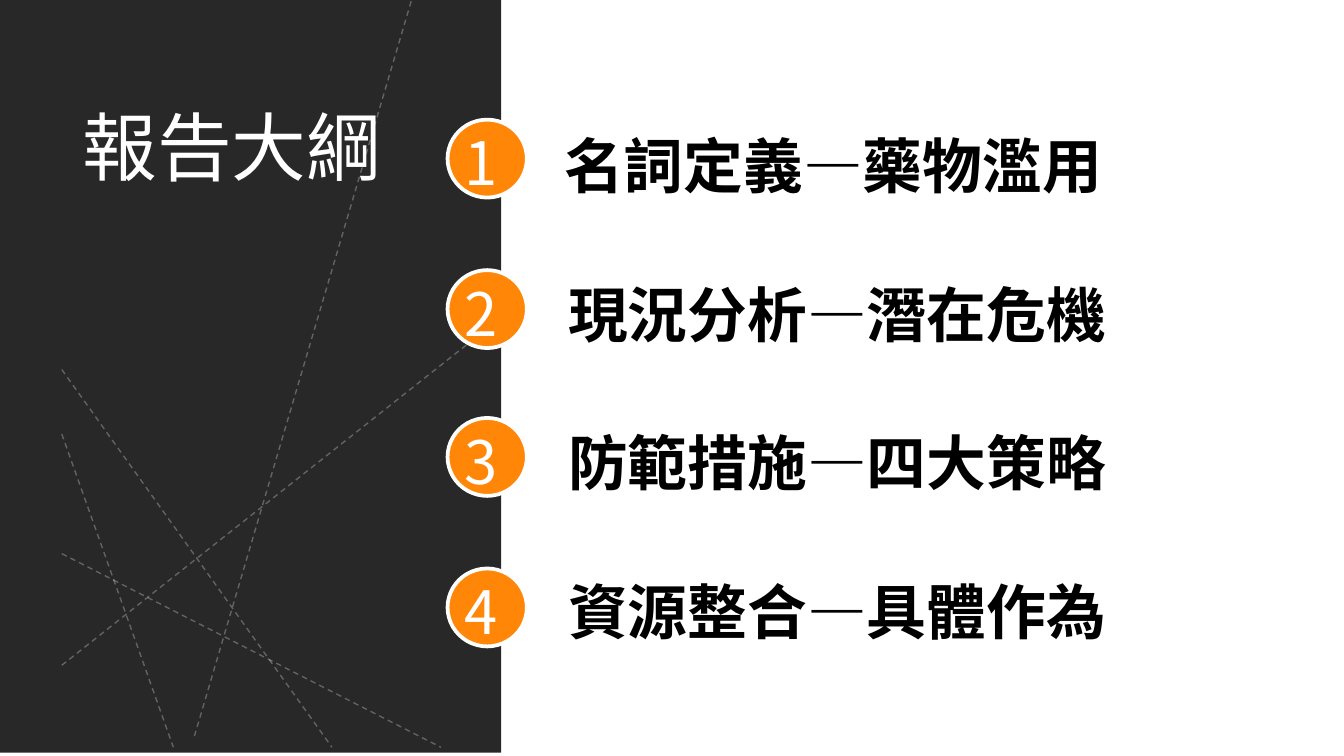
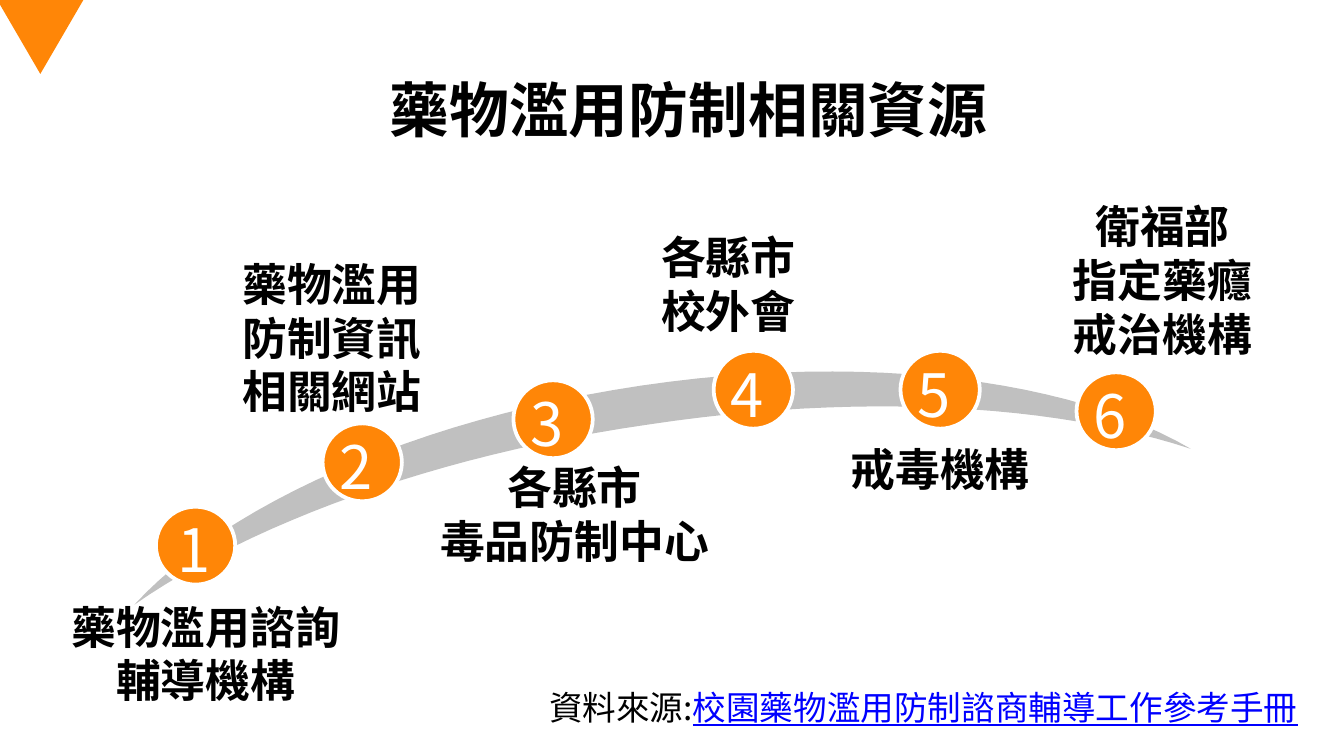
from lxml import etree
from pptx import Presentation
from pptx import util as u
from pptx.dml.color import RGBColor
from pptx.enum import dml, shapes, text
from pptx.oxml.ns import qn

# Shared style
ORANGE, DARK, GREY = "FF8607", "282828", "C0C0C0"
WHITE, BLACK, LINK = "FFFFFF", "000000", "0000FF"
FONT, TITLE_FONT, SOURCE_FONT = "Noto Sans CJK SC", "Roboto Condensed", "Noto Sans CJK JP"
LEFT, CENTER = text.PP_ALIGN.LEFT, text.PP_ALIGN.CENTER
BADGE_W, BADGE_H = 0.59, 0.58

# Slide 1: outline
OUTLINE_TITLE = "報告大綱"
OUTLINE = [  # label, label left and top, badge top
    ("名詞定義—藥物濫用", 4.1, 0.91, 0.89),
    ("現況分析—潛在危機", 4.13, 2.02, 2.01),
    ("防範措施—四大策略", 4.13, 3.12, 3.11),
    ("資源整合—具體作為", 4.13, 4.23, 4.23),
]
PANEL_LINES = [  # from x, y, to x, y
    (0.46, 4.12, 3.28, 5.56),
    (0.46, 4.95, 5.93, 0.62),
    (0.46, 3.23, 1.29, 5.56),
    (3.08, -0.06, 1.44, 5.5),
    (0.46, 2.75, 2.47, 5.56),
]

# Slide 2: resources along an arc
RESOURCE_TITLE = "藥物濫用防制相關資源"
RESOURCES = [  # badge left, top; label box; label lines
    ((1.16, 3.77), (0.42, 4.41, 2.22, 0.91), ["藥物濫用諮詢", "輔導機構"]),
    ((2.4, 3.15), (1.52, 1.86, 1.9, 1.31), ["藥物濫用", "防制資訊", "相關網站"]),
    ((3.82, 2.83), (3.03, 3.37, 2.49, 0.91), ["各縣市", "毒品防制中心"]),
    ((5.31, 2.61), (4.6, 1.66, 1.64, 0.91), ["各縣市", "校外會"]),
    ((6.7, 2.61), (6.19, 3.24, 1.61, 0.5), ["戒毒機構"]),
    ((8.01, 2.77), (7.83, 1.43, 1.64, 1.31), ["衛福部", "指定藥癮", "戒治機構"]),
]
ARC_START = (4.77, 2.87)
ARC_CURVES = [  # two control points and an end point
    ((6.46, 2.62), (7.99, 2.83), (8.86, 3.34)),
    ((7.86, 3.01), (6.4, 2.92), (4.82, 3.16)),
    ((3.23, 3.39), (1.86, 3.9), (1, 4.5)),
    ((1.68, 3.76), (3.09, 3.12), (4.77, 2.87)),
]
SOURCE = ("資料來源:", "校園藥物濫用防制諮商輔導工作參考手冊")


def rgb(value):
    return RGBColor.from_string(value)


def box(values):
    return [u.Inches(v) for v in values]


def add_run(p, content, size, color, font=FONT, bold=False, underline=None):
    r = p.add_run()
    r.text = content
    f = r.font
    f.size, f.bold, f.underline, f.name = u.Pt(size), bold, underline, font
    f.color.rgb = rgb(color)
    # East Asian typeface
    etree.SubElement(r._r.get_or_add_rPr(), qn("a:ea")).set("typeface", font)


def write(sp, lines, size, color, align=LEFT, wrap=True, **style):
    tf = sp.text_frame
    tf.word_wrap = wrap
    tf.auto_size = text.MSO_AUTO_SIZE.SHAPE_TO_FIT_TEXT
    tf.vertical_anchor = text.MSO_ANCHOR.TOP
    for i, line in enumerate(lines):
        p = tf.add_paragraph() if i else tf.paragraphs[0]
        p.alignment = align
        add_run(p, line, size, color, **style)


def add_title(s, content, place, size, color, align, **style):
    sp = s.shapes.title
    sp.left, sp.top, sp.width, sp.height = box(place)
    write(sp, [content], size, color, align, wrap=False, **style)
    # Bring the title in front of what is drawn so far
    sp.element.getparent().append(sp.element)


def add_label(s, place, lines, size, align=LEFT):
    write(s.shapes.add_textbox(*box(place)), lines, size, BLACK, align, bold=True)


def paint(sp, fill, line=None):
    sp.shadow.inherit = False
    sp.fill.solid()
    sp.fill.fore_color.rgb = rgb(fill)
    if line:
        sp.line.color.rgb = rgb(line)
        sp.line.width = u.Pt(2)
    else:
        sp.line.fill.background()


def add_preset(parent, kind, place, fill, line=None):
    sp = parent.shapes.add_shape(kind, *box(place))
    paint(sp, fill, line)
    return sp


def add_badge(s, x, y, number, inset=0.03):
    grp = s.shapes.add_group_shape()
    add_preset(grp, shapes.MSO_SHAPE.OVAL, (x, y, BADGE_W, BADGE_H), ORANGE, WHITE)
    tb = grp.shapes.add_textbox(*box((x + inset, y, 0.46, 0.64)))
    write(tb, [str(number)], 32, WHITE, wrap=False)


def add_dashed_line(parent, ends):
    cx = parent.shapes.add_connector(shapes.MSO_CONNECTOR.STRAIGHT, *box(ends))
    cx.line.color.rgb = rgb(WHITE)
    cx.line.width = u.Pt(0.75)
    cx.line.dash_style = dml.MSO_LINE.DASH
    sp_pr = cx.element.spPr
    color = sp_pr.find(".//" + qn("a:srgbClr"))
    etree.SubElement(color, qn("a:alpha")).set("val", "28000")
    etree.SubElement(sp_pr, qn("a:effectLst"))


def curve_points(start, curves, steps=24):
    for c1, c2, end in curves:
        for i in range(1, steps + 1):
            t = i / steps
            k = 1 - t
            yield box(k**3 * a + 3 * k * k * t * b + 3 * k * t * t * c + t**3 * d
                      for a, b, c, d in zip(start, c1, c2, end))
        start = end


def outline_slide(prs):
    s = prs.slides.add_slide(prs.slide_layouts[5])
    # Dark panel with dashed lines
    add_preset(s, shapes.MSO_SHAPE.RECTANGLE, (0, -0.02, 3.73, 5.62), DARK)
    grp = s.shapes.add_group_shape()
    for ends in PANEL_LINES:
        add_dashed_line(grp, ends)
    add_title(s, OUTLINE_TITLE, (0.5, 0.7, 2.45, 0.77), 40, WHITE, CENTER)
    # Numbered items
    for i, (label, x, y, badge_top) in enumerate(OUTLINE):
        add_badge(s, 3.33, badge_top, i + 1)
        add_label(s, (x, y, 5.84, 0.64), [label], 32)


def resource_slide(prs):
    s = prs.slides.add_slide(prs.slide_layouts[5])
    add_title(s, RESOURCE_TITLE, (2.8, 0.49, 4.69, 0.64), 32, BLACK, LEFT,
              font=TITLE_FONT, bold=True)
    # Grey arc
    fb = s.shapes.build_freeform(*box(ARC_START))
    fb.add_line_segments(list(curve_points(ARC_START, ARC_CURVES)), close=True)
    paint(fb.convert_to_shape(), GREY)
    # Labels, then badges on top
    for _, place, lines in RESOURCES:
        add_label(s, place, lines, 24, CENTER)
    for i, ((x, y), _, _) in enumerate(RESOURCES):
        add_badge(s, x, y, i + 1, inset=0.03 if i else 0.06)
    # Source line
    tf = s.shapes.add_textbox(*box((3.86, 5.11, 6.02, 0.3))).text_frame
    tf.word_wrap = True
    tf.vertical_anchor = text.MSO_ANCHOR.MIDDLE
    p = tf.paragraphs[0]
    p.alignment = CENTER
    caption, handbook = SOURCE
    add_run(p, caption, 18, BLACK, SOURCE_FONT)
    add_run(p, handbook, 18, LINK, SOURCE_FONT, underline=True)
    # Corner triangle
    sp = add_preset(s, shapes.MSO_SHAPE.ISOSCELES_TRIANGLE, (-0.02, 0, 0.64, 0.55), ORANGE)
    sp.rotation = 180


def main():
    prs = Presentation()
    prs.slide_width = u.Inches(10)
    prs.slide_height = u.Inches(10 * 9 / 16)
    outline_slide(prs)
    resource_slide(prs)
    prs.save("out.pptx")


if __name__ == "__main__":
    main()
